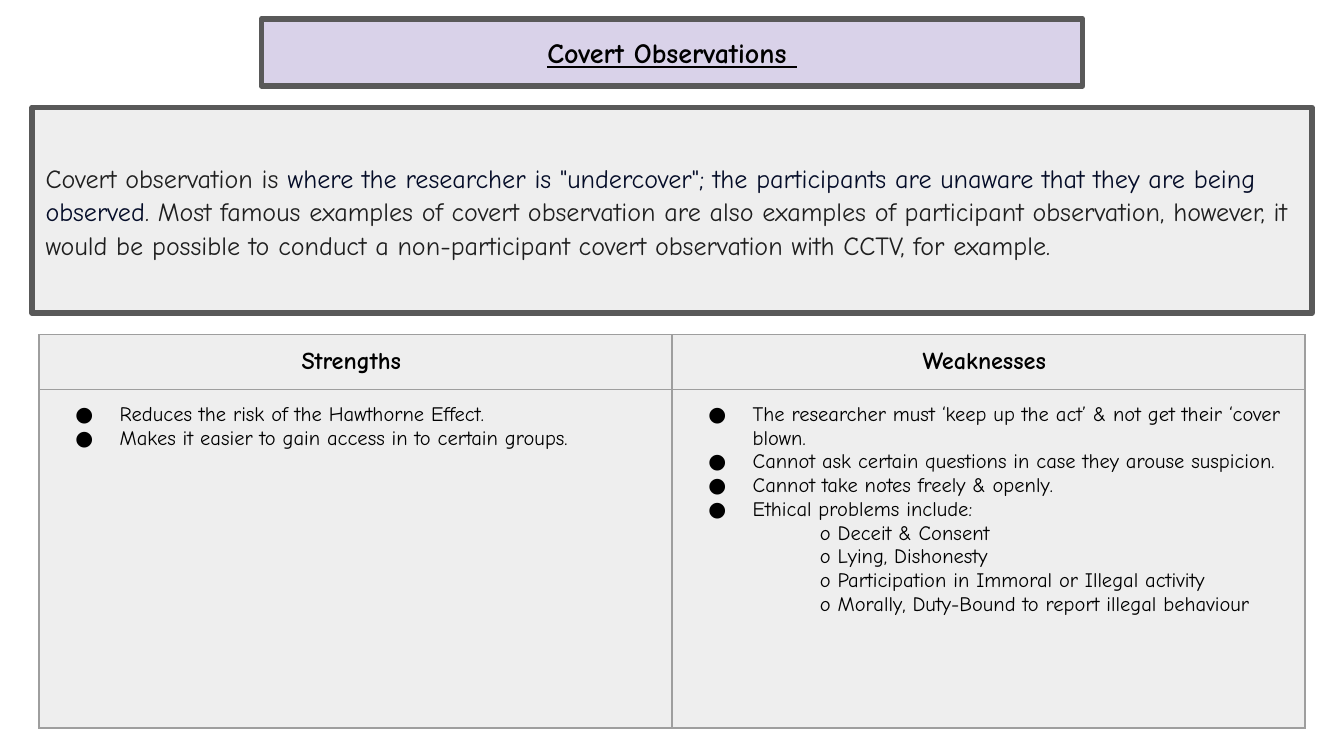
from lxml.etree import SubElement
from pptx import Presentation
from pptx.dml.color import RGBColor
from pptx.enum.shapes import MSO_SHAPE as Shape
from pptx.enum.text import MSO_ANCHOR as Anchor, PP_ALIGN as Align
from pptx.oxml.ns import qn
from pptx.util import Inches, Pt

FONT = "Comic Neue"
GREY = "EEEEEE"

presentation = Presentation()
presentation.slide_width = Inches(10)
presentation.slide_height = Inches(10 * 9 / 16)
slide = presentation.slides.add_slide(presentation.slide_layouts[6])


def paint(target, color):
    """Give a fill or a line's fill one solid colour."""
    target.solid()
    target.fore_color.rgb = RGBColor.from_string(color)


def style(font, size, color="000000", bold=False):
    font.name, font.size, font.bold = FONT, Pt(size), bold
    paint(font.fill, color)


# Title and definition boxes, both centred on the slide
frames = []
for top, width, height, color in ((0.14, 6.11, 0.5, "D9D2E9"), (0.8, 9.52, 1.53, GREY)):
    box = slide.shapes.add_shape(
        Shape.RECTANGLE, Inches((10 - width) / 2), Inches(top), Inches(width), Inches(height))
    box.shadow.inherit = False
    paint(box.fill, color)
    paint(box.line.fill, "595959")
    box.line.width = Pt(3)
    frame = box.text_frame
    frame.word_wrap = True
    frame.vertical_anchor = Anchor.MIDDLE
    frame.margin_left = frame.margin_right = frame.margin_top = frame.margin_bottom = Inches(0.1)
    frames.append(frame)
title_frame, definition_frame = frames

title = title_frame.paragraphs[0]
title.text = "Covert Observations "
title.alignment = Align.CENTER
style(title.font, 15, bold=True)
title.font.underline = True

definition = definition_frame.paragraphs[0]
definition.alignment = Align.LEFT
definition.line_spacing = 1.08
definition.space_after = Pt(8)
for text, color in (
    ("Covert observation is ", "1F1F1F"),
    ('where the researcher is "undercover"; the participants are unaware that they '
     "are being observed", "040C28"),
    (". Most famous examples of covert observation are also examples of participant "
     "observation, however, it would be possible to conduct a non-participant covert "
     "observation with CCTV, for example.", "1F1F1F"),
):
    run = definition.add_run()
    run.text = text
    style(run.font, 14, color)

# Strengths and weaknesses: heading, bulleted points, indented sub-points
columns = (
    ("Strengths ",
     ("Reduces the risk of the Hawthorne Effect.",
      "Makes it easier to gain access in to certain groups."),
     ()),
    ("Weaknesses ",
     ("The researcher must ‘keep up the act’ & not get their ‘cover blown.",
      "Cannot ask certain questions in case they arouse suspicion.",
      "Cannot take notes freely & openly.",
      "Ethical problems include:"),
     ("o Deceit & Consent",
      "o Lying, Dishonesty",
      "o Participation in Immoral or Illegal activity",
      "o Morally, Duty-Bound to report illegal behaviour")),
)
table = slide.shapes.add_table(
    2, 2, Inches(0.29), Inches(2.49), Inches(9.42), Inches(2.93)).table
table.rows[0].height, table.rows[1].height = Inches(0.4), Inches(2.52)

for cell in table.iter_cells():
    cell.margin_left = cell.margin_right = cell.margin_top = cell.margin_bottom = Inches(0.1)
    properties = cell._tc.get_or_add_tcPr()
    for side in ("a:lnL", "a:lnR", "a:lnT", "a:lnB"):
        border = SubElement(properties, qn(side), w=str(Pt(0.75)))
        SubElement(SubElement(border, qn("a:solidFill")), qn("a:srgbClr"), val="9E9E9E")
    paint(cell.fill, GREY)

for column, (heading, points, subpoints) in enumerate(columns):
    paragraph = table.cell(0, column).text_frame.paragraphs[0]
    paragraph.text = heading
    paragraph.alignment = Align.CENTER
    style(paragraph.font, 13, bold=True)

    frame = table.cell(1, column).text_frame
    frame.text = "\n".join(points + subpoints)
    for index, paragraph in enumerate(frame.paragraphs):
        properties = paragraph._p.get_or_add_pPr()
        if index < len(points):
            properties.set("marL", str(Inches(0.5)))
            properties.set("indent", str(Inches(-0.33)))
            SubElement(SubElement(properties, qn("a:buClr")), qn("a:srgbClr"), val="000000")
            SubElement(properties, qn("a:buSzPts"), val="1100")
            SubElement(properties, qn("a:buFont"), typeface=FONT)
            SubElement(properties, qn("a:buChar"), char="●")
        else:
            properties.set("marL", str(Inches(1)))
            properties.set("indent", "0")
        style(paragraph.font, 11)

presentation.save("out.pptx")
